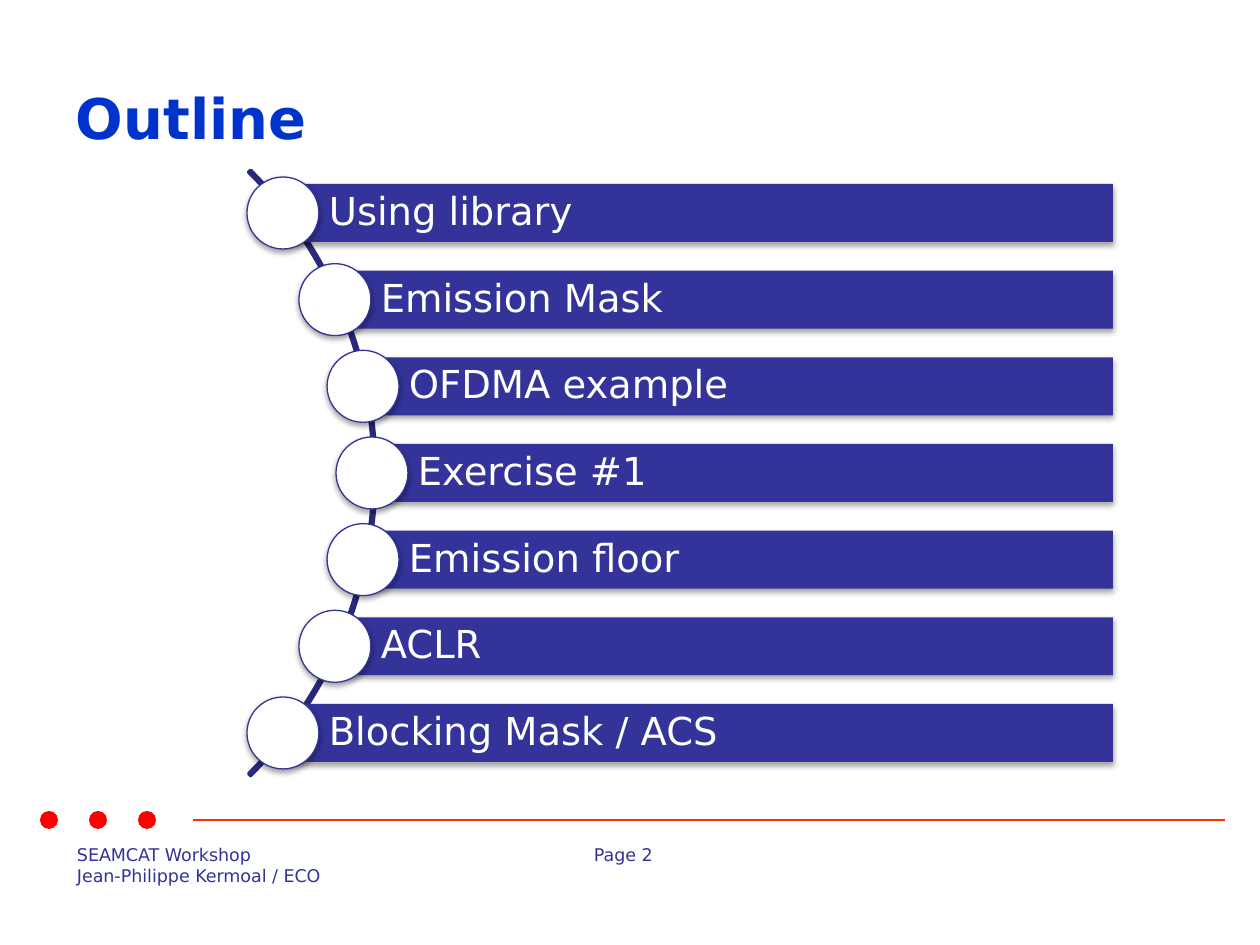
from math import sqrt

from lxml.etree import SubElement
from pptx import Presentation
from pptx.dml.color import RGBColor
from pptx.enum.shapes import MSO_CONNECTOR as Connector, MSO_SHAPE as Shape
from pptx.enum.text import MSO_ANCHOR as Anchor, PP_ALIGN as Align
from pptx.oxml.ns import qn
from pptx.util import Emu, Pt

PX = 914400 // 126
FONT = "DejaVu Sans"
WHITE = RGBColor(0xFF, 0xFF, 0xFF)
BLACK = RGBColor(0x00, 0x00, 0x00)
INDIGO = RGBColor(0x33, 0x33, 0x99)
DARK_INDIGO = RGBColor(0x29, 0x29, 0x7B)
BLUE = RGBColor(0x00, 0x33, 0xCC)
RED = RGBColor(0xFF, 0x00, 0x00)
ORANGE = RGBColor(0xFF, 0x33, 0x00)

TOPICS = [
    "Using library",
    "Emission Mask",
    "OFDMA example",
    "Exercise #1",
    "Emission floor",
    "ACLR",
    "Blocking Mask / ACS",
]


def px(*lengths):
    """Turn pixel lengths into EMU."""
    return [Emu(round(length * PX)) for length in lengths]


def write(shape, text, size=10, color=INDIGO, bold=False, anchor=Anchor.TOP,
          insets=(13, 6, 13, 6), wrap=True, spacing=1.0):
    """Fill a shape with formatted lines of text."""
    frame = shape.text_frame
    frame.word_wrap = wrap
    frame.vertical_anchor = anchor
    (frame.margin_left, frame.margin_top,
     frame.margin_right, frame.margin_bottom) = px(*insets)
    frame.text = text
    for paragraph in frame.paragraphs:
        paragraph.alignment = Align.LEFT
        paragraph.line_spacing = spacing
        font = paragraph.font
        font.name, font.size, font.bold = FONT, Pt(size), bold
        font.color.rgb = color


def add_shape(slide, kind, box, fill=None, line=None, width=0.75, shadow=False):
    """Add a preset shape with an optional fill, outline and soft shadow."""
    shape = slide.shapes.add_shape(kind, *px(*box))
    if fill is None:
        shape.fill.background()
    else:
        shape.fill.solid()
        shape.fill.fore_color.rgb = fill
    if line is None:
        shape.line.fill.background()
    else:
        shape.line.color.rgb = line
        shape.line.width = Pt(width)
    shape.shadow.inherit = False
    if shadow:
        effects = shape.element.spPr.find(qn("a:effectLst"))
        outer = SubElement(effects, qn("a:outerShdw"), blurRad="40000",
                           dist="23000", dir="5400000", rotWithShape="0")
        color = SubElement(outer, qn("a:srgbClr"), val=str(BLACK))
        SubElement(color, qn("a:alpha"), val="35000")
    return shape


def add_title(slide, box):
    """Place the slide title in its box."""
    write(slide.shapes.add_textbox(*px(*box)), "Outline", size=32, color=BLUE,
          bold=True, anchor=Anchor.MIDDLE)


def add_topics(slide, box):
    """Place topic bars whose circles follow an arc at the left of the box."""
    left, top, width, height = box
    radius, circle, bar = 428, 72, 58
    center_x, center_y = left - 302, top + height / 2
    arc = add_shape(slide, Shape.BLOCK_ARC,
                    (center_x - radius, center_y - radius, 2 * radius, 2 * radius),
                    line=DARK_INDIGO, width=2)
    for index, value in enumerate((189, 27, 0.0032)):
        arc.adjustments[index] = value

    pitch = (height - 82) / (len(TOPICS) - 1)
    for index, topic in enumerate(TOPICS):
        offset = (index - (len(TOPICS) - 1) / 2) * pitch
        x = center_x + sqrt((radius - 4) ** 2 - offset ** 2)
        y = center_y + offset
        strip = add_shape(slide, Shape.RECTANGLE,
                          (x, y - bar / 2, left + width - x, bar),
                          fill=INDIGO, shadow=True)
        write(strip, topic, size=22, color=WHITE, anchor=Anchor.MIDDLE,
              insets=(46, 7, 7, 7), spacing=0.9)
        add_shape(slide, Shape.OVAL,
                  (x - circle / 2, y - circle / 2, circle, circle),
                  fill=WHITE, line=INDIGO, shadow=True)


def add_footer(slide, box):
    """Place the dots, the rule and the footer texts."""
    left, top, width, height = box
    dot = 18
    for index in range(3):
        add_shape(slide, Shape.OVAL, (left + index * 49, top, dot, dot), fill=RED)
    y = top + dot / 2
    rule = slide.shapes.add_connector(
        Connector.STRAIGHT, *px(left + 153, y, left + width, y))
    rule.line.color.rgb = ORANGE
    rule.line.width = Pt(0.75)
    SubElement(rule.element.spPr, qn("a:effectLst"))
    for x, text_width, text in (
        (24, 278, "SEAMCAT Workshop\nJean-Philippe Kermoal / ECO"),
        (541, 103, "Page 2"),
    ):
        label = slide.shapes.add_textbox(
            *px(left + x, top + 27, text_width, height - 27))
        write(label, text, wrap=False)


def main():
    """Build the outline slide."""
    presentation = Presentation()
    presentation.slide_width, presentation.slide_height = px(1260, 945)
    slide = presentation.slides.add_slide(presentation.slide_layouts[6])
    add_footer(slide, (40, 811, 1185, 81))
    add_title(slide, (63, 38, 1134, 158))
    add_topics(slide, (250, 172, 863, 602))
    presentation.save("out.pptx")


if __name__ == "__main__":
    main()
